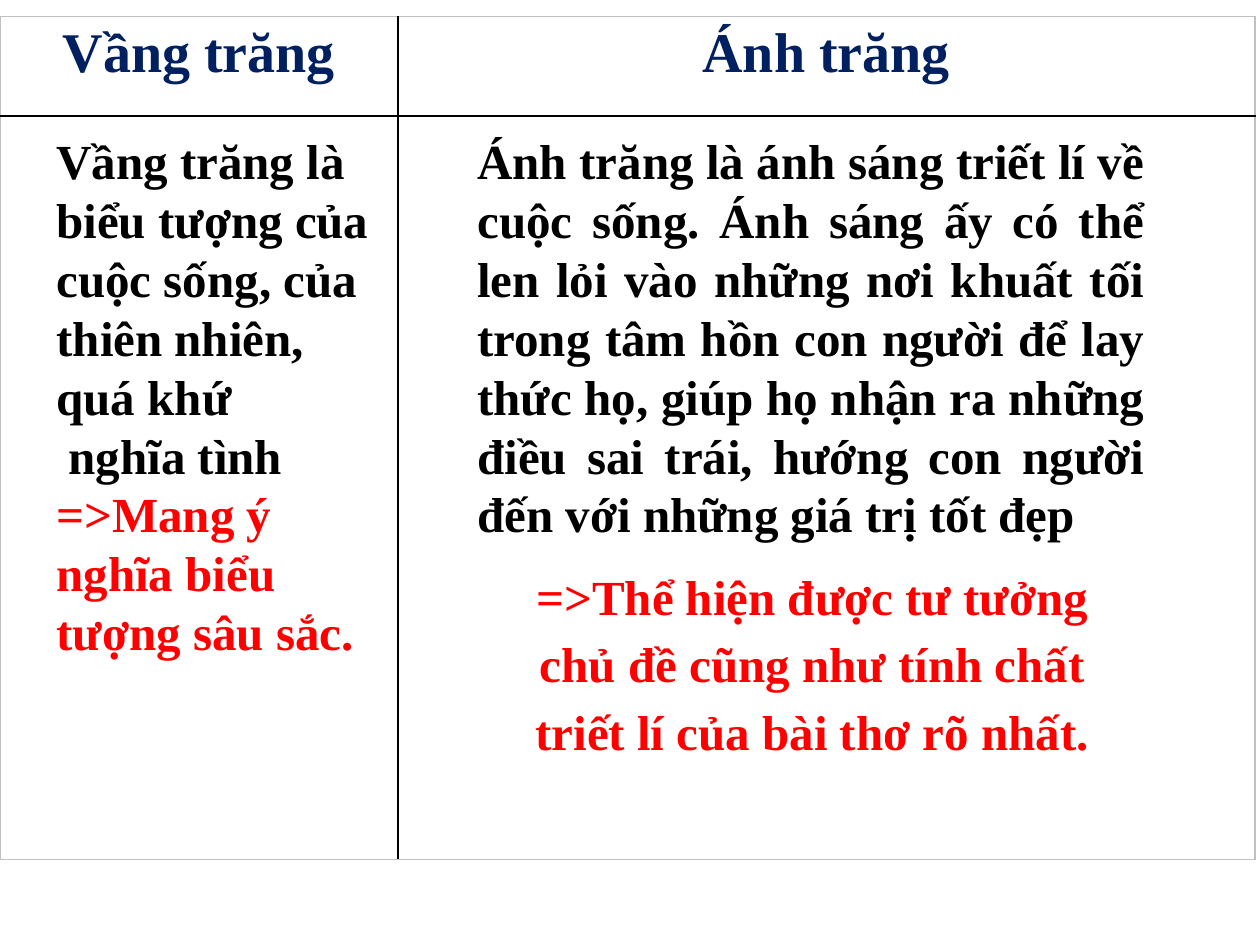
from dataclasses import dataclass

from lxml.etree import SubElement
from pptx import Presentation
from pptx.dml.color import RGBColor as RGB
from pptx.enum.text import MSO_AUTO_SIZE as AutoSize, PP_ALIGN as Align
from pptx.oxml.ns import qn
from pptx.util import Inches, Pt


@dataclass(frozen=True)
class Theme:
    font: str = "Times New Roman"
    head_size: int = 32
    body_size: int = 28
    head: str = "002060"
    text: str = "000000"
    accent: str = "FF0000"
    paper: str = "FFFFFF"
    frame: str = "C0C0C0"
    rule: str = "000000"


THEME = Theme()
HEADS = ["Vầng trăng", "Ánh trăng"]
MOON = ("Vầng trăng là biểu tượng của cuộc sống, của thiên nhiên, "
        "quá khứ\v nghĩa tình")
MOON_MEANING = "=>Mang ý nghĩa biểu tượng sâu sắc."
LIGHT = ("Ánh trăng là ánh sáng triết lí về cuộc sống. Ánh sáng ấy có thể "
         "len lỏi vào những nơi khuất tối trong tâm hồn con người để lay "
         "thức họ, giúp họ nhận ra những điều sai trái, hướng con người "
         "đến với những giá trị tốt đẹp")
LIGHT_MEANING = ("=>Thể hiện được tư tưởng chủ đề cũng như tính chất "
                 "triết lí của bài thơ rõ nhất.")


def style(p, text, size, color, align=Align.LEFT):
    p.text = text
    p.alignment = align
    p.font.name, p.font.size, p.font.bold = THEME.font, Pt(size), True
    p.font.color.rgb = RGB.from_string(color)


def set_borders(cell, colors):
    """Draw 1 pt borders; colors maps L, R, T, B to a colour."""
    tc_pr = cell._tc.get_or_add_tcPr()
    for i, (side, color) in enumerate(colors.items()):
        ln = SubElement(tc_pr, qn(f"a:ln{side}"), w=str(Pt(1)))
        fill = SubElement(ln, qn("a:solidFill"))
        SubElement(fill, qn("a:srgbClr"), val=color)
        tc_pr.insert(i, ln)


def add_comparison(slide, box, col_shares, row_shares):
    """Two-column table with headings above empty body cells."""
    x, y, w, h = box
    n_rows, n_cols = len(row_shares), len(col_shares)
    table = slide.shapes.add_table(n_rows, n_cols, *map(Inches, box)).table
    for col, share in zip(table.columns, col_shares):
        col.width = Inches(w * share)
    for row, share in zip(table.rows, row_shares):
        row.height = Inches(h * share)
    for r in range(n_rows):
        for c in range(n_cols):
            cell = table.cell(r, c)
            cell.margin_left = cell.margin_right = Inches(0.07)
            cell.fill.solid()
            cell.fill.fore_color.rgb = RGB.from_string(THEME.paper)
            outer = {"L": c == 0, "R": c == n_cols - 1,
                     "T": r == 0, "B": r == n_rows - 1}
            set_borders(cell, {side: THEME.frame if edge else THEME.rule
                               for side, edge in outer.items()})
    for c, head in enumerate(HEADS):
        style(table.cell(0, c).text_frame.paragraphs[0], head,
              THEME.head_size, THEME.head, Align.CENTER)


def add_note(slide, box, parts, align=Align.LEFT):
    """Text box with one paragraph for each (text, colour) pair."""
    tf = slide.shapes.add_textbox(*map(Inches, box)).text_frame
    tf.word_wrap = True
    tf.auto_size = AutoSize.SHAPE_TO_FIT_TEXT
    for i, (text, color) in enumerate(parts):
        p = tf.add_paragraph() if i else tf.paragraphs[0]
        style(p, text, THEME.body_size, color, align)
    return tf


def add_moon_column(slide, box):
    add_note(slide, box, [(MOON, THEME.text), (MOON_MEANING, THEME.accent)])


def add_light_column(slide, box):
    x, y, w, h = box
    split = h * 0.66
    add_note(slide, (x, y, w, split), [(LIGHT, THEME.text)], Align.JUSTIFY)
    # Conclusion, set in from both sides
    inset = 0.16
    tf = add_note(slide, (x + inset, y + split, w - 0.3, h - split),
                  [(LIGHT_MEANING, THEME.accent)], Align.CENTER)
    tf.paragraphs[0].line_spacing = 1.15
    tf.paragraphs[0].space_after = Pt(10)


def main():
    prs = Presentation()
    prs.slide_width, prs.slide_height = Inches(10), Inches(7.5)
    slide = prs.slides.add_slide(prs.slide_layouts[6])
    add_comparison(slide, (0, 0.13, 9.96, 6.69),
                   (0.317, 0.683), (0.118, 0.882))
    add_moon_column(slide, (0.35, 0.99, 2.71, 5.28))
    add_light_column(slide, (3.69, 0.99, 5.49, 5.13))
    prs.save("out.pptx")


if __name__ == "__main__":
    main()
